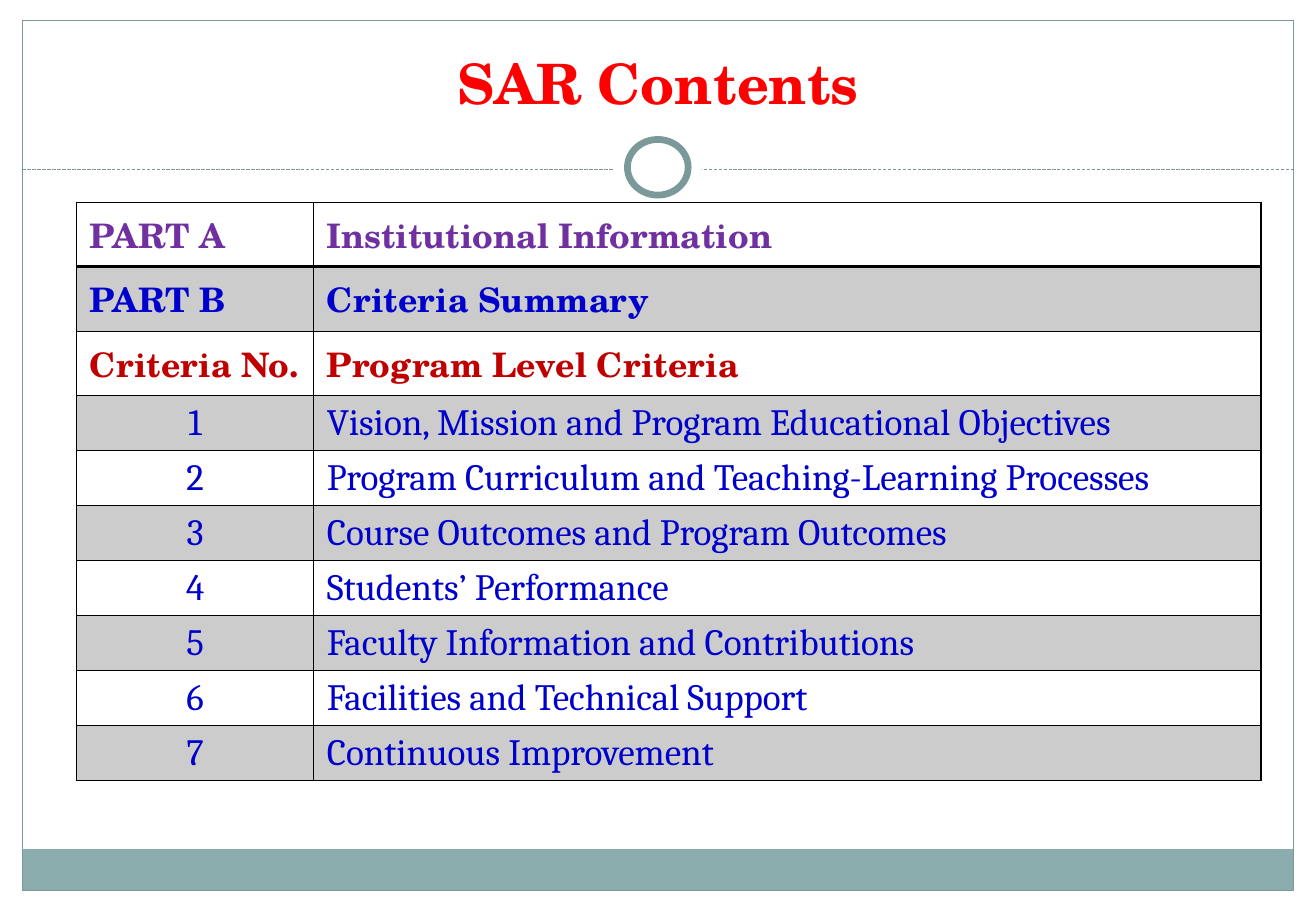
from lxml.etree import SubElement
from pptx import Presentation
from pptx.dml.color import RGBColor
from pptx.enum.dml import MSO_LINE_DASH_STYLE as Dash
from pptx.enum.shapes import MSO_CONNECTOR as Connector, MSO_SHAPE as Shape
from pptx.enum.text import MSO_ANCHOR as Anchor, MSO_AUTO_SIZE as AutoSize, PP_ALIGN as Align
from pptx.oxml.ns import qn
from pptx.util import Pt

COLORS = {
    "white": "FFFFFF", "black": "000000", "band": "CCCCCC",
    "teal": "8CADAE", "frame": "7C999A", "title": "FF0000",
    "purple": "7030A0", "blue": "0000CC", "crimson": "C00000",
}
HEADING_FONT, BODY_FONT = "TeX Gyre Schola", "Cambria"
HEADINGS = [
    ("PART A", "Institutional Information", "purple"),
    ("PART B", "Criteria Summary", "blue"),
    ("Criteria No.", "Program Level Criteria", "crimson"),
]
CRITERIA = [
    "Vision, Mission and Program Educational Objectives",
    "Program Curriculum and Teaching-Learning Processes",
    "Course Outcomes and Program Outcomes",
    "Students’ Performance",
    "Faculty Information and Contributions",
    "Facilities and Technical Support",
    "Continuous Improvement",
]


def color(name):
    return RGBColor.from_string(COLORS[name])


def add_run(paragraph, text, font, size, color_name, bold):
    run = paragraph.add_run()
    run.text = text
    run.font.name = font
    run.font.size = Pt(size)
    run.font.bold = bold
    run.font.color.rgb = color(color_name)


def add_plain_shape(slide, kind, box, fill=None, line=None, weight=0.75):
    shape = slide.shapes.add_shape(kind, *map(Pt, box))
    shape.shadow.inherit = False
    if fill:
        shape.fill.solid()
        shape.fill.fore_color.rgb = color(fill)
    else:
        shape.fill.background()
    if line:
        shape.line.color.rgb = color(line)
        shape.line.width = Pt(weight)
    else:
        shape.line.fill.background()


def add_frame(slide, box):
    left, top, width, height = box
    footer_height, rule_y = 24.5, top + 88.5
    footer = (left, top + height - footer_height, width, footer_height)
    add_plain_shape(slide, Shape.RECTANGLE, footer, fill="teal")
    add_plain_shape(slide, Shape.RECTANGLE, box, line="frame")

    rule = slide.shapes.add_connector(
        Connector.STRAIGHT, Pt(left), Pt(rule_y), Pt(left + width), Pt(rule_y))
    rule.line.color.rgb = color("frame")
    rule.line.width = Pt(0.75)
    rule.line.dash_style = Dash.SQUARE_DOT
    properties = rule.element.find(qn("p:spPr"))
    properties.find(qn("a:ln")).find(qn("a:prstDash")).set("val", "sysDash")
    SubElement(properties, qn("a:effectLst"))

    center_x, center_y = left + width / 2, rule_y - 1.5
    for ring_width, ring_height, line in ((52, 48, None), (36, 33, "frame")):
        ring = (center_x - ring_width / 2, center_y - ring_height / 2,
                ring_width, ring_height)
        add_plain_shape(slide, Shape.OVAL, ring, "white", line, 4)


def fill_title(slide, box):
    title = slide.shapes.title
    title.left, title.top, title.width, title.height = map(Pt, box)
    frame = title.text_frame
    frame.word_wrap = True
    frame.auto_size = AutoSize.NONE
    frame.vertical_anchor = Anchor.BOTTOM
    paragraph = frame.paragraphs[0]
    paragraph.alignment = Align.CENTER
    add_run(paragraph, "SAR Contents", HEADING_FONT, 33, "title", True)


def set_borders(cell, top, bottom):
    properties = cell._tc.get_or_add_tcPr()
    for side, weight in (("L", 1), ("R", 1), ("T", top), ("B", bottom)):
        line = SubElement(properties, qn(f"a:ln{side}"), w=str(Pt(weight)))
        fill = SubElement(line, qn("a:solidFill"))
        SubElement(fill, qn("a:srgbClr"), val=COLORS["black"])


def add_contents_table(slide, box):
    left, top, width, height = box
    number_width, heading_height = 140.5, 38.1
    criterion_height = (height - heading_height * len(HEADINGS)) / len(CRITERIA)
    rows = HEADINGS + [(str(number), text, "blue")
                       for number, text in enumerate(CRITERIA, 1)]
    table = slide.shapes.add_table(len(rows), 2, *map(Pt, box)).table
    table.first_row = table.horz_banding = False
    table.columns[0].width = Pt(number_width)
    table.columns[1].width = Pt(width - number_width)
    for row_index, (label, text, color_name) in enumerate(rows):
        heading = row_index < len(HEADINGS)
        font, size = (HEADING_FONT, 20) if heading else (BODY_FONT, 22)
        table.rows[row_index].height = Pt(heading_height if heading else criterion_height)
        for column_index, content in enumerate((label, text)):
            cell = table.cell(row_index, column_index)
            set_borders(cell, 2 if row_index == 1 else 1, 2 if row_index == 0 else 1)
            cell.fill.solid()
            cell.fill.fore_color.rgb = color("band" if row_index % 2 else "white")
            cell.margin_left = cell.margin_right = Pt(7.8)
            cell.margin_top = cell.margin_bottom = Pt(3.6)
            cell.vertical_anchor = Anchor.MIDDLE
            paragraph = cell.text_frame.paragraphs[0]
            centered = not heading and column_index == 0
            paragraph.alignment = Align.CENTER if centered else Align.LEFT
            add_run(paragraph, content, font, size, color_name, heading)


def main():
    presentation = Presentation()
    presentation.slide_width, presentation.slide_height = Pt(780), Pt(540)
    slide = presentation.slides.add_slide(presentation.slide_layouts[5])
    add_frame(slide, (13.2, 12.2, 753.4, 515.6))
    fill_title(slide, (26, 23.8, 728, 48.2))
    add_contents_table(slide, (45.4, 120, 702, 342.5))
    presentation.save("out.pptx")


if __name__ == "__main__":
    main()
